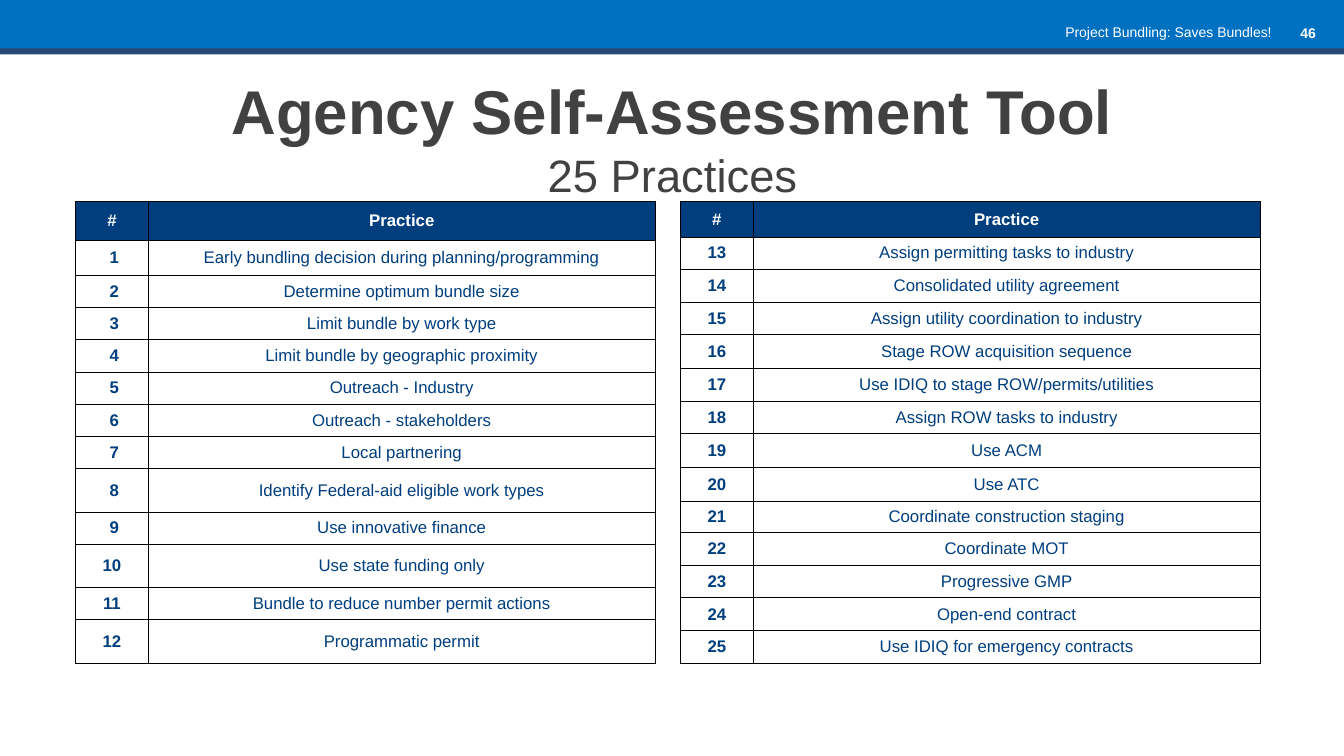
from lxml import etree
from pptx import Presentation
from pptx.dml.color import RGBColor
from pptx.enum.shapes import MSO_SHAPE
from pptx.enum.text import MSO_ANCHOR, PP_ALIGN
from pptx.oxml.ns import qn
from pptx.util import Inches, Pt

RECTANGLE = MSO_SHAPE.RECTANGLE
MIDDLE = MSO_ANCHOR.MIDDLE
CENTER, RIGHT = PP_ALIGN.CENTER, PP_ALIGN.RIGHT

WHITE = "FFFFFF"
NAVY = "003E7E"
CHARCOAL = "414142"
BORDER_SIDES = ("a:lnL", "a:lnR", "a:lnT", "a:lnB")
BORDER_WIDTH = Pt(0.5)

# Each entry is a practice and its row height in inches
LEFT_PRACTICES = [
    ("Early bundling decision during planning/programming", 0.35),
    ("Determine optimum bundle size", 0.32),
    ("Limit bundle by work type", 0.32),
    ("Limit bundle by geographic proximity", 0.32),
    ("Outreach - Industry", 0.32),
    ("Outreach - stakeholders", 0.32),
    ("Local partnering", 0.32),
    ("Identify Federal-aid eligible work types", 0.43),
    ("Use innovative finance", 0.32),
    ("Use state funding only", 0.43),
    ("Bundle to reduce number permit actions", 0.32),
    ("Programmatic permit", 0.43),
]
RIGHT_PRACTICES = [
    ("Assign permitting tasks to industry", 0.32),
    ("Consolidated utility agreement", 0.33),
    ("Assign utility coordination to industry", 0.32),
    ("Stage ROW acquisition sequence", 0.33),
    ("Use IDIQ to stage ROW/permits/utilities", 0.33),
    ("Assign ROW tasks to industry", 0.32),
    ("Use ACM", 0.34),
    ("Use ATC", 0.33),
    ("Coordinate construction staging", 0.31),
    ("Coordinate MOT", 0.33),
    ("Progressive GMP", 0.32),
    ("Open-end contract", 0.33),
    ("Use IDIQ for emergency contracts", 0.32),
]


def rgb(color):
    """Turn a hex string into a colour."""
    return RGBColor.from_string(color)


def add_run(paragraph, text, size, color, bold):
    run = paragraph.add_run()
    run.text = text
    run.font.name = "Arial"
    run.font.size = Pt(size)
    run.font.bold = bold
    run.font.color.rgb = rgb(color)


presentation = Presentation()
presentation.slide_width = Inches(13.33)
presentation.slide_height = Inches(7.5)
slide = presentation.slides.add_slide(presentation.slide_layouts[6])

# Header bands
for top, height, color in [(-0.04, 0.57, "0070C0"), (0.48, 0.06, "284971")]:
    band = slide.shapes.add_shape(
        RECTANGLE, 0, Inches(top), presentation.slide_width, Inches(height))
    band.shadow.inherit = False
    band.fill.solid()
    band.fill.fore_color.rgb = rgb(color)
    band.line.fill.background()

# Header text: slide number and deck name
for text, left, top, width, height, bold in [
    ("46", 12.15, 0.19, 1, 0.4, True),
    ("Project Bundling: Saves Bundles!", 8.78, 0.18, 3.93, 0.27, False),
]:
    header = slide.shapes.add_textbox(
        Inches(left), Inches(top), Inches(width), Inches(height))
    header.text_frame.word_wrap = True
    paragraph = header.text_frame.paragraphs[0]
    paragraph.alignment = RIGHT
    add_run(paragraph, text, 10, WHITE, bold)

# Title
title = slide.shapes.add_textbox(
    Inches(0.67), Inches(0.67), Inches(12), Inches(1.33))
title.text_frame.word_wrap = True
title.text_frame.vertical_anchor = MIDDLE
title.text_frame.margin_top = Inches(0.1)
paragraph = title.text_frame.paragraphs[0]
paragraph.alignment = CENTER
add_run(paragraph, "Agency Self-Assessment Tool", 44.1, CHARCOAL, True)
paragraph.add_line_break()
add_run(paragraph, "25 Practices", 32.4, CHARCOAL, False)

# Practice tables
for left, first_number, header_height, practices in [
    (0.75, 1, 0.38, LEFT_PRACTICES),
    (6.75, 13, 0.35, RIGHT_PRACTICES),
]:
    rows = [("#", "Practice", header_height)]
    for number, (practice, height) in enumerate(practices, first_number):
        rows.append((f"{number:>2}", practice, height))

    table = slide.shapes.add_table(
        len(rows), 2, Inches(left), Inches(2), Inches(5.75), Inches(4.58)).table
    table.horz_banding = False
    table.columns[0].width = Inches(0.72)
    table.columns[1].width = Inches(5.03)

    for row_index, (number, practice, height) in enumerate(rows):
        table.rows[row_index].height = Inches(height)
        is_header = row_index == 0
        for column_index, text in enumerate((number, practice)):
            cell = table.cell(row_index, column_index)
            cell.margin_left = cell.margin_right = 0
            cell.margin_top = cell.margin_bottom = 0
            cell.vertical_anchor = MIDDLE
            properties = cell._tc.get_or_add_tcPr()
            for side in BORDER_SIDES:
                border = etree.SubElement(properties, qn(side), w=str(BORDER_WIDTH))
                border_fill = etree.SubElement(border, qn("a:solidFill"))
                etree.SubElement(border_fill, qn("a:srgbClr"), val="000000")
            if is_header:
                cell.fill.solid()
                cell.fill.fore_color.rgb = rgb(NAVY)
            else:
                cell.fill.background()
            paragraph = cell.text_frame.paragraphs[0]
            paragraph.alignment = CENTER
            add_run(paragraph, text, 12, WHITE if is_header else NAVY,
                    is_header or column_index == 0)

presentation.save("out.pptx")
